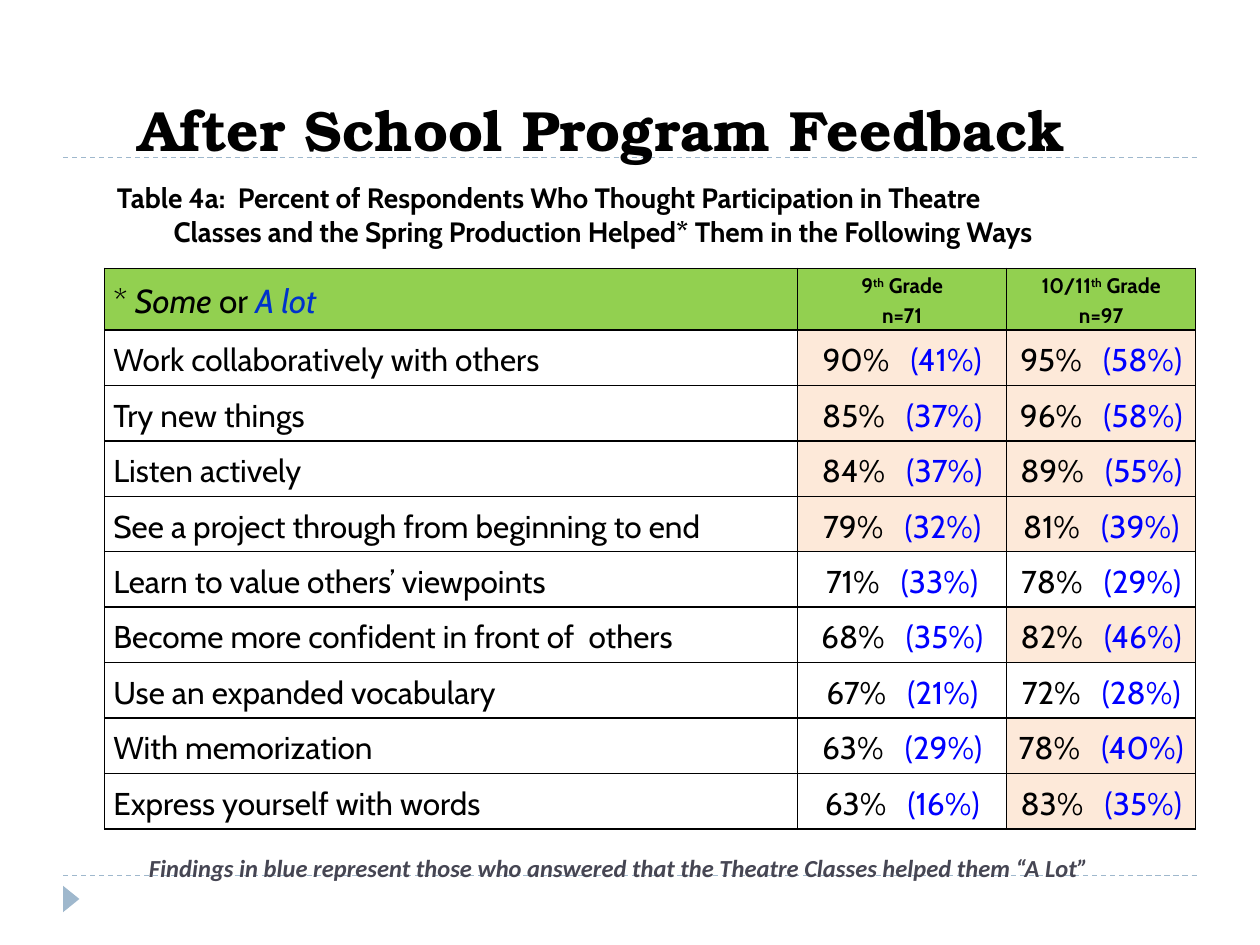
"""Build the After School Program Feedback slide."""
from dataclasses import dataclass, field
from typing import Any, NamedTuple

from lxml import etree
from pptx import Presentation
from pptx import util as u
from pptx.dml.color import RGBColor
from pptx.enum import dml, shapes, text
from pptx.oxml import ns


class Theme(NamedTuple):
    ink: str = "000000"
    note: str = "464653"
    rule: str = "9FB8CD"
    header: str = "92D050"
    strong: str = "FDE9D9"
    plain: str = "FFFFFF"
    lot_label: str = "0033CC"
    lot: str = "0000FF"
    serif: str = "TeX Gyre Bonum"
    sans: str = "Cabin"
    footer: str = "Calibri"
    title_size: float = 32.4
    key_size: float = 19
    body_size: float = 18
    caption_size: float = 16
    note_size: float = 14
    head_size: float = 12


THEME = Theme()
COLUMNS, ROWS = 100, 75
UNIT = u.Inches(10) // COLUMNS


class Box(NamedTuple):
    left: float
    top: float
    width: float
    height: float

    def lengths(self) -> list[int]:
        return [span(value) for value in self]


@dataclass
class Span:
    words: str
    size: float = THEME.body_size
    name: str = THEME.sans
    color: str = THEME.ink
    look: dict[str, Any] = field(default_factory=dict)
    raised: bool = False


@dataclass
class Para:
    spans: list[Span]
    look: dict[str, Any] = field(default_factory=dict)
    indent: float = 0


class Score(NamedTuple):
    total: int
    lot: int

    @property
    def is_strong(self) -> bool:
        return self.total >= 75 and self.lot >= 30


class Finding(NamedTuple):
    skill: str
    ninth: Score
    upper: Score


FINDINGS = [
    Finding("Work collaboratively with others", Score(90, 41), Score(95, 58)),
    Finding("Try new things", Score(85, 37), Score(96, 58)),
    Finding("Listen actively", Score(84, 37), Score(89, 55)),
    Finding("See a project through from beginning to end", Score(79, 32), Score(81, 39)),
    Finding("Learn to value others’ viewpoints", Score(71, 33), Score(78, 29)),
    Finding("Become more confident in front of  others", Score(68, 35), Score(82, 46)),
    Finding("Use an expanded vocabulary", Score(67, 21), Score(72, 28)),
    Finding("With memorization", Score(63, 29), Score(78, 40)),
    Finding("Express yourself with words", Score(63, 16), Score(83, 35)),
]
BOLD = {"bold": True}
ITALIC = {"italic": True}
CELL = {"line_spacing": 1.15}
CENTERED = {**CELL, "alignment": text.PP_ALIGN.CENTER}


def span(units: float) -> int:
    return round(units * UNIT)


def apply(target: Any, values: dict[str, Any]) -> None:
    for name, value in values.items():
        setattr(target, name, value)


def paint(fill: Any, color: str) -> None:
    fill.solid()
    fill.fore_color.rgb = RGBColor.from_string(color)


def write(frame: Any, paras: list[Para]) -> None:
    for index, para in enumerate(paras):
        line = frame.add_paragraph() if index else frame.paragraphs[0]
        apply(line, para.look)
        if para.indent:
            line._p.get_or_add_pPr().set("marL", str(span(para.indent)))
        for part in para.spans:
            run = line.add_run()
            run.text = part.words
            apply(run.font, {"size": u.Pt(part.size), "name": part.name,
                             "bold": False, "italic": False, **part.look})
            run.font.color.rgb = RGBColor.from_string(part.color)
            if part.raised:
                run.font._element.set("baseline", "30000")


def add_text(page: Any, box: Box, anchor: Any, paras: list[Para]) -> None:
    frame = page.shapes.add_textbox(*box.lengths()).text_frame
    apply(frame, {"word_wrap": True, "vertical_anchor": anchor})
    write(frame, paras)


def add_rule(page: Any, row: float) -> None:
    ends = [span(value) for value in (5, row, COLUMNS - 5, row)]
    rule = page.shapes.add_connector(shapes.MSO_CONNECTOR.STRAIGHT, *ends)
    apply(rule.line, {"width": u.Pt(0.75), "dash_style": dml.MSO_LINE.DASH})
    rule.line.color.rgb = RGBColor.from_string(THEME.rule)
    etree.SubElement(rule._element.spPr, ns.qn("a:effectLst"))


def add_marker(page: Any, box: Box) -> None:
    marker = page.shapes.add_shape(shapes.MSO_SHAPE.ISOSCELES_TRIANGLE, *box.lengths())
    marker.rotation = 90
    marker.shadow.inherit = False
    paint(marker.fill, THEME.rule)
    marker.line.fill.background()


def add_borders(cell: Any) -> None:
    props = cell._tc.get_or_add_tcPr()
    for index, side in enumerate(("lnL", "lnR", "lnT", "lnB")):
        edge = etree.Element(ns.qn(f"a:{side}"), w=str(u.Pt(1)))
        fill = etree.SubElement(edge, ns.qn("a:solidFill"))
        etree.SubElement(fill, ns.qn("a:srgbClr"), val=THEME.ink)
        props.insert(index, edge)


def fill_cell(cell: Any, color: str, paras: list[Para]) -> None:
    apply(cell, {"margin_left": span(0.7), "margin_right": span(0.7), "margin_top": 0,
                 "margin_bottom": 0, "vertical_anchor": text.MSO_ANCHOR.MIDDLE})
    paint(cell.fill, color)
    add_borders(cell)
    write(cell.text_frame, paras)


def grade_head(grade: str, count: int) -> list[Para]:
    style = {"size": THEME.head_size, "look": BOLD}
    return [Para([Span(grade, **style), Span("th", raised=True, **style),
                  Span(" Grade", **style)], CENTERED),
            Para([Span(f"n={count}", **style)], CENTERED)]


def add_findings(page: Any, box: Box) -> None:
    table = page.shapes.add_table(len(FINDINGS) + 1, 3, *box.lengths()).table
    apply(table, {"first_row": False, "horz_banding": False})
    for column, width in zip(table.columns, (55, 16.6, 15)):
        column.width = span(width)
    for index, row in enumerate(table.rows):
        row.height = span(4.4 if index else 4.9)
    size = THEME.key_size
    key = [Span("* ", size), Span("Some ", size, look=ITALIC), Span("or ", size),
           Span("A lot", size, color=THEME.lot_label, look=ITALIC)]
    heads = [[Para(key, CELL)], grade_head("9", 71), grade_head("10/11", 97)]
    for column, paras in enumerate(heads):
        fill_cell(table.cell(0, column), THEME.header, paras)
    for row, finding in enumerate(FINDINGS, 1):
        fill_cell(table.cell(row, 0), THEME.plain, [Para([Span(finding.skill)], CELL)])
        for column, score in enumerate((finding.ninth, finding.upper), 1):
            spans = [Span(f"{score.total}%   "), Span(f"({score.lot}%)", color=THEME.lot)]
            fill_cell(table.cell(row, column), THEME.strong if score.is_strong else THEME.plain,
                      [Para(spans, CENTERED)])


def main() -> None:
    deck = Presentation()
    apply(deck, {"slide_width": COLUMNS * UNIT, "slide_height": ROWS * UNIT})
    page = deck.slides.add_slide(deck.slide_layouts[6])
    for row in (69.5, 12.5):
        add_rule(page, row)
    add_marker(page, Box(4.6, 70.7, 2.1, 1.3))
    add_text(page, Box(10, 5.5, 81.7, 7.9), text.MSO_ANCHOR.BOTTOM, [Para([Span(
        "After School Program Feedback", THEME.title_size, THEME.serif, look=BOLD)])])
    add_findings(page, Box(8.3, 21.3, 86.6, 44.5))
    caption = {"size": THEME.caption_size, "look": BOLD}
    add_text(page, Box(8.3, 13.8, 84.2, 6.4), text.MSO_ANCHOR.MIDDLE, [
        Para([Span("Table 4a:  Percent of Respondents Who Thought Participation in Theatre",
                   **caption)]),
        Para([Span("Classes and the Spring Production Helped* Them in the Following Ways",
                   **caption)], indent=4.5)])
    add_text(page, Box(5, 67.2, 82.5, 5.3), text.MSO_ANCHOR.TOP, [Para([Span(
        "Findings in blue represent those who answered that the Theatre Classes helped them “A Lot”",
        THEME.note_size, THEME.footer, THEME.note, {**BOLD, **ITALIC})],
        {"alignment": text.PP_ALIGN.RIGHT})])
    deck.save("out.pptx")


if __name__ == "__main__":
    main()
